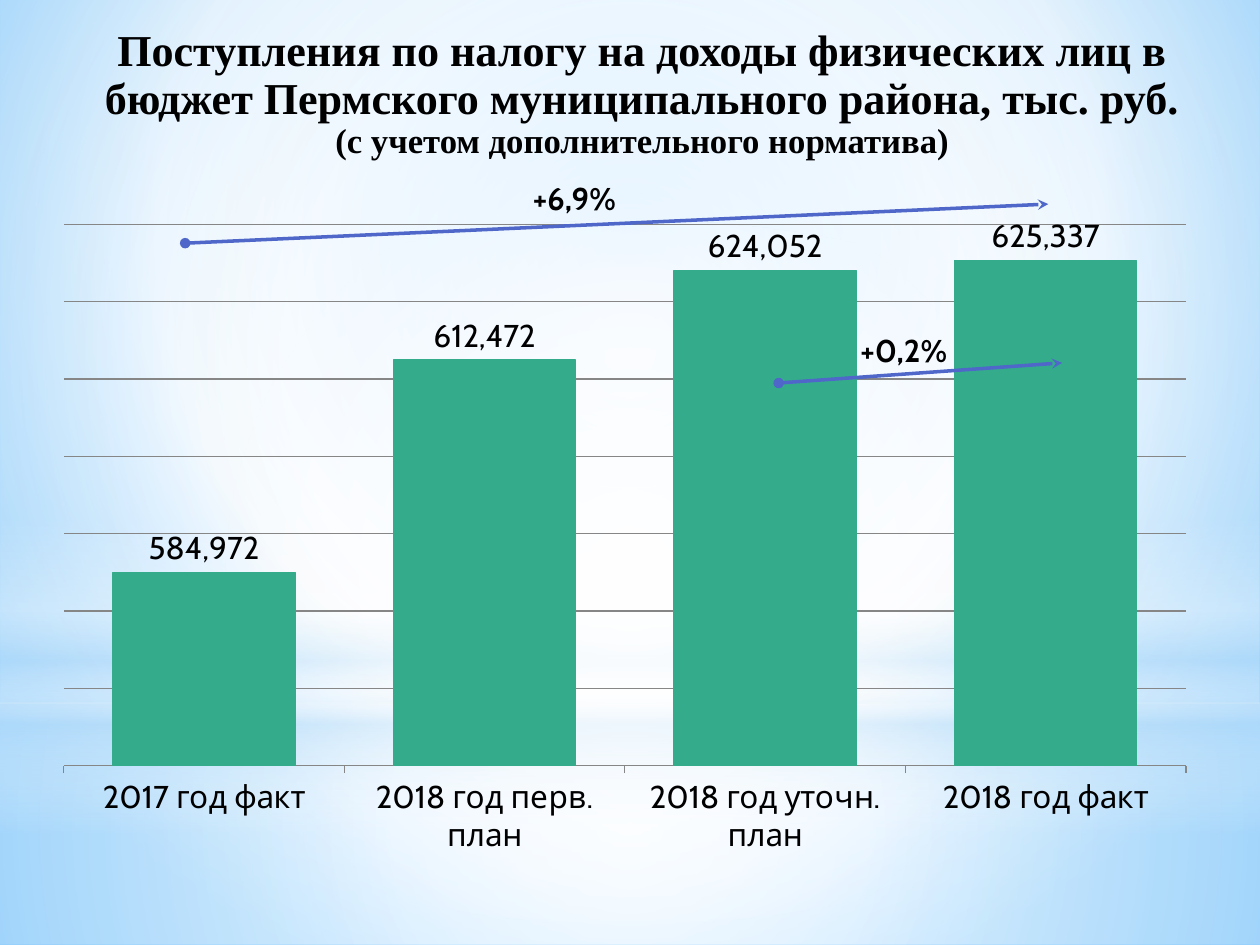
from lxml import etree
from pptx import Presentation
from pptx import util as u
from pptx.chart.data import CategoryChartData
from pptx.dml.color import RGBColor
from pptx.enum import chart as ch, shapes, text
from pptx.oxml import parse_xml
from pptx.oxml.ns import nsdecls, qn

INK = {"text": "000000", "bar": "34AC8B", "arrow": "4E67C8", "grid": "868686",
       "white": "FFFFFF", "haze": "B4DCFA", "sky": "9ED5FF", "deep": "5BB9FF"}


def grad(stops, to=(50, 50, 50, 50), angle=None):
    """Gradient fill from (position %, colour name, opacity %) stops."""
    marks = "".join(
        f'<a:gs pos="{pos * 1000}"><a:srgbClr val="{INK[name]}">'
        f'<a:alpha val="{alpha * 1000}"/></a:srgbClr></a:gs>'
        for pos, name, alpha in stops)
    if angle is None:
        sides = " ".join(f'{side}="{n * 1000}"' for side, n in zip("ltrb", to))
        way = f'<a:path path="circle"><a:fillToRect {sides}/></a:path>'
    else:
        way = f'<a:lin ang="{angle * 60000}" scaled="0"/>'
    return parse_xml(f'<a:gradFill {nsdecls("a")} rotWithShape="1">'
                     f'<a:gsLst>{marks}</a:gsLst>{way}</a:gradFill>')


def write(para, words, size=18, face="Cabin", bold=True):
    run = para.add_run()
    run.text = words
    run.font.size, run.font.name, run.font.bold = u.Pt(size), face, bold
    run.font.color.rgb = RGBColor.from_string(INK["text"])


deck = Presentation()
deck.slide_width, deck.slide_height = u.Inches(10), u.Inches(7.5)
cell = deck.slide_width // 100  # the slide is a grid of 100 columns by 75 rows
spots = {name: [int(n * cell) for n in cells] for name, cells in {
    "floor": (0, 55.8, 100, 19.2),
    "wall": (0, 0, 100, 55.8),
    "band": (0, 41.2, 100, 25),
    "glow": (0, 17.5, 100, 55.8),
    "title": (3.5, 1.4, 94.9, 12.3),
    "chart": (3.5, 15.3, 92.1, 53.7),
    "+6,9%": (41.3, 13.7, 11.8, 4),
    "+0,2%": (67.3, 25.8, 11.8, 4),
    "rise": (14.7, 19.3, 83.2, 16.2),
    "step": (61.8, 30.4, 84.3, 28.8),
}.items()}
slide = deck.slides.add_slide(deck.slide_layouts[5])

# Background and its layers of light
slide.background.fill.solid()
solid = slide.background._cSld.find(".//" + qn("a:solidFill"))
solid.getparent().replace(solid, grad(
    [(0, "sky", 100), (60, "white", 100), (100, "deep", 100)], (20, 10, 20, 60)))

rect, oval = shapes.MSO_SHAPE.RECTANGLE, shapes.MSO_SHAPE.OVAL
for name, kind, angle, stops in [
    ("floor", rect, None, [(0, "white", 91), (37, "white", 76), (100, "haze", 79)]),
    ("wall", rect, None, [(0, "white", 89), (48, "white", 62), (100, "haze", 79)]),
    ("band", rect, 90, [(0, "white", 0), (29, "white", 30), (45, "haze", 40),
                        (55, "white", 26), (65, "haze", 60), (100, "white", 0)]),
    ("glow", oval, None, [(0, "white", 100), (56, "white", 0)]),
]:
    layer = slide.shapes.add_shape(kind, *spots[name])
    layer.shadow.inherit = False
    layer.line.fill.background()
    layer.fill.solid()
    solid = layer._element.spPr.find(qn("a:solidFill"))
    layer._element.spPr.replace(solid, grad(stops, angle=angle))

# Title, lifted above the layers
title = slide.shapes.title
title.left, title.top, title.width, title.height = spots["title"]
slide.shapes._spTree.append(title._element)
title.text_frame.vertical_anchor = text.MSO_ANCHOR.MIDDLE
title.text_frame.auto_size = text.MSO_AUTO_SIZE.NONE
para = title.text_frame.paragraphs[0]
para.alignment, para.line_spacing = text.PP_ALIGN.CENTER, 0.9
write(para, "Поступления по налогу на доходы физических лиц в бюджет "
      "Пермского муниципального района, тыс. руб.", 25.2, "Times New Roman")
para.add_line_break()
write(para, "(с учетом дополнительного норматива)", 19.8, "Times New Roman")

# Column chart
data = CategoryChartData(number_format="#,##0")
data.categories = ["2017 год факт", "2018 год перв. план",
                   "2018 год уточн. план", "2018 год факт"]
data.add_series("Series 1", [584972, 612472, 624052, 625337])
chart = slide.shapes.add_chart(
    ch.XL_CHART_TYPE.COLUMN_CLUSTERED, *spots["chart"], data).chart
chart.has_legend = chart.has_title = False
chart.font.size, chart.font.name = u.Pt(18), "Cabin"
chart.font.color.rgb = RGBColor.from_string(INK["text"])

axis = chart.value_axis
axis.visible = False
axis.minimum_scale, axis.maximum_scale, axis.major_unit = 560000, 630000, 10000
axis.has_major_gridlines = True
chart.category_axis.major_tick_mark = ch.XL_TICK_MARK.OUTSIDE
for line in (axis.major_gridlines.format.line, chart.category_axis.format.line):
    line.color.rgb = RGBColor.from_string(INK["grid"])
    line.width = u.Pt(0.75)

plot = chart.plots[0]
plot.gap_width, plot.vary_by_categories = 54, False
plot.has_data_labels = True
tags = plot.data_labels
tags.show_value = True
tags.number_format, tags.number_format_is_linked = "#,##0", False
tags.position = ch.XL_LABEL_POSITION.OUTSIDE_END
bars = plot.series[0].format
bars.fill.solid()
bars.fill.fore_color.rgb = bars.line.color.rgb = RGBColor.from_string(INK["bar"])
bars.line.width = u.Pt(0.75)

area = chart._chartSpace.chart.plotArea
for old in area.findall(qn("c:layout")):
    area.remove(old)
frame = etree.Element(qn("c:layout"))
area.insert(0, frame)
manual = etree.SubElement(frame, qn("c:manualLayout"))
for tag, val in [("layoutTarget", "inner"), ("xMode", "edge"), ("yMode", "edge"),
                 ("x", 0.017), ("y", 0.047), ("w", 0.967), ("h", 0.8)]:
    etree.SubElement(manual, qn("c:" + tag)).set("val", str(val))

# Growth arrows with their labels
for name, label in [("rise", "+6,9%"), ("step", "+0,2%")]:
    arrow = slide.shapes.add_connector(shapes.MSO_CONNECTOR.STRAIGHT, *spots[name])
    arrow.line.color.rgb = RGBColor.from_string(INK["arrow"])
    arrow.line.width = u.Pt(2)
    ends = arrow.line._get_or_add_ln()
    etree.SubElement(ends, qn("a:headEnd")).set("type", "oval")
    etree.SubElement(ends, qn("a:tailEnd")).set("type", "stealth")
    etree.SubElement(arrow._element.spPr, qn("a:effectLst"))
    note = slide.shapes.add_textbox(*spots[label]).text_frame
    note.word_wrap = True
    note.auto_size = text.MSO_AUTO_SIZE.SHAPE_TO_FIT_TEXT
    write(note.paragraphs[0], label)

deck.save("out.pptx")
